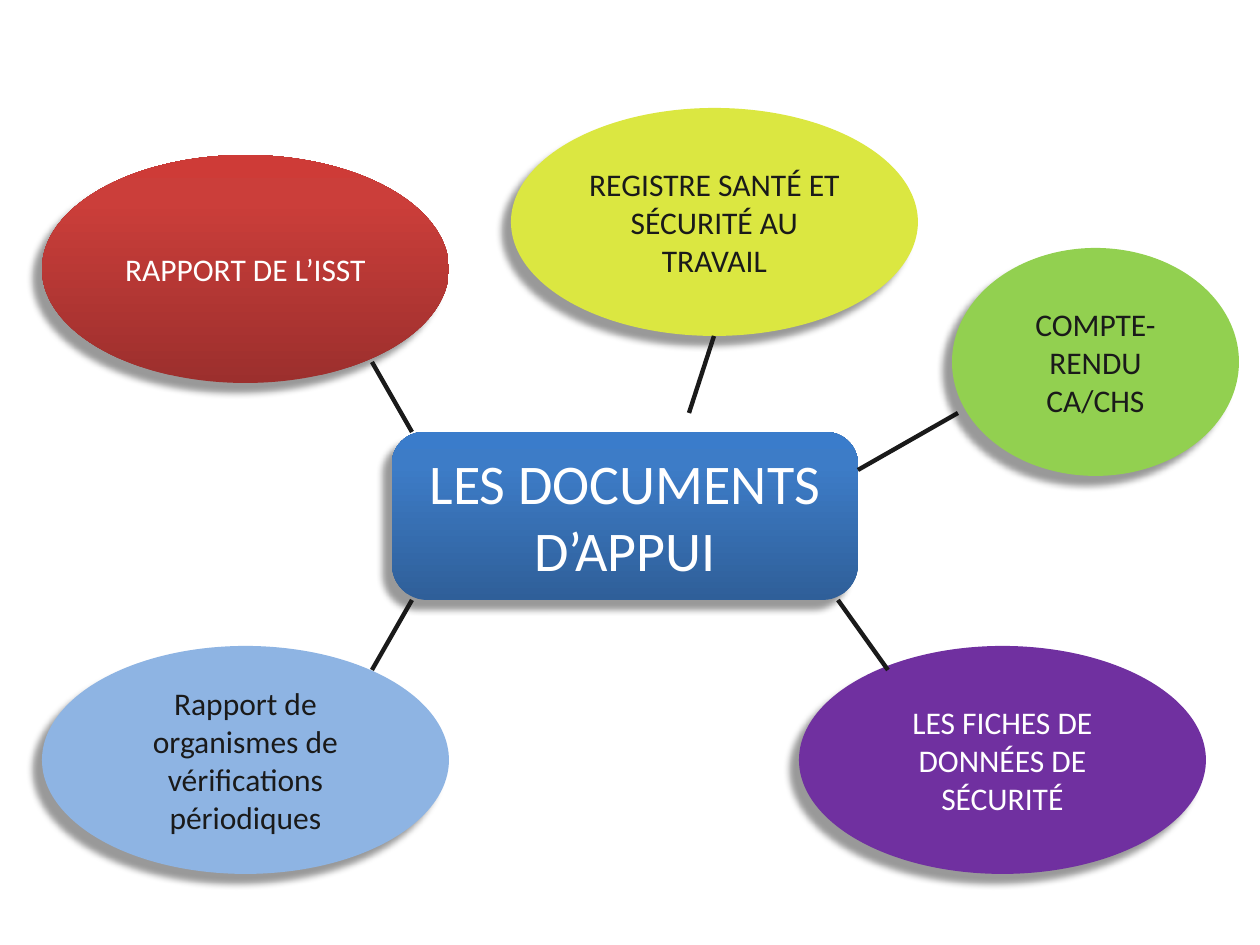
"""Build a mind map of the supporting documents around a central topic."""
from copy import deepcopy

from lxml.etree import SubElement
from pptx import Presentation
from pptx.dml.color import RGBColor
from pptx.enum.shapes import MSO_CONNECTOR, MSO_SHAPE
from pptx.enum.text import MSO_ANCHOR, PP_ALIGN
from pptx.oxml.ns import qn
from pptx.util import Emu, Pt

PX = 914400 // 126
WHITE, INK = "FFFFFF", "1A1A1A"
BUBBLE_W, BUBBLE_H = 407, 228
LEFT_X, LOWER_Y = 42, 646
GRADIENT_POSITIONS = (0, 0.8, 1)

TOPIC = {
    "text": "LES DOCUMENTS D’APPUI",
    "box": (392, 432, 466, 168),
    "fill": ("2F5F99", "3D7CC7", "3A7CCB"),
    "corners": (0.19, 0.21),
}
DOCUMENTS = [
    ("RAPPORT DE L’ISST", LEFT_X, 155, BUBBLE_W, ("9C2F2D", "CB3E3A", "CE3B37"), WHITE),
    ("Rapport de organismes de vérifications périodiques",
     LEFT_X, LOWER_Y, BUBBLE_W, ("8EB4E3",), INK),
    ("LES FICHES DE DONNÉES DE SÉCURITÉ", 799, LOWER_Y, BUBBLE_W, ("7030A0",), WHITE),
    ("REGISTRE SANTÉ ET SÉCURITÉ AU TRAVAIL", 511, 108, BUBBLE_W, ("DBE741",), INK),
    ("COMPTE-RENDU CA/CHS", 952, 248, 287, ("92D050",), INK),
]
LINKS = [
    (372, 362, 412, 432),
    (412, 600, 372, 670),
    (689, 413, 714, 336),
    (838, 600, 888, 670),
    (858, 470, 958, 413),
]


def px(*lengths):
    return [Emu(length * PX) for length in lengths]


def color(hex_string):
    return RGBColor.from_string(hex_string)


def paint(shape, colors):
    if len(colors) == 1:
        shape.fill.solid()
        shape.fill.fore_color.rgb = color(colors[0])
        return
    shape.fill.gradient()
    shape.fill.gradient_angle = 90
    stop_list = shape._element.spPr.find(".//" + qn("a:gsLst"))
    stop_list.append(deepcopy(stop_list[-1]))
    for stop, position, tone in zip(shape.fill.gradient_stops, GRADIENT_POSITIONS, colors):
        stop.position = position
        stop.color.rgb = color(tone)


def cast_shadow(shape):
    shape.shadow.inherit = False
    effects = shape._element.spPr.find(qn("a:effectLst"))
    shadow = SubElement(effects, qn("a:outerShdw"), blurRad=str(Pt(4)), dist=str(Pt(8)),
                        dir=str(135 * 60000), algn="tr", rotWithShape="0")
    black = SubElement(shadow, qn("a:srgbClr"), val="000000")
    SubElement(black, qn("a:alpha"), val="40000")


def write(shape, text, *, size, ink):
    frame = shape.text_frame
    frame.word_wrap = True
    frame.vertical_anchor = MSO_ANCHOR.MIDDLE
    paragraph = frame.paragraphs[0]
    paragraph.alignment = PP_ALIGN.CENTER
    run = paragraph.add_run()
    run.text = text
    run.font.name = "Calibri"
    run.font.size = Pt(size)
    run.font.color.rgb = color(ink)


def add_node(slide, preset, box, colors, text, **text_format):
    node = slide.shapes.add_shape(preset, *px(*box))
    paint(node, colors)
    node.line.fill.background()
    cast_shadow(node)
    write(node, text, **text_format)
    return node


def add_document(slide, text, x, y, width, colors, ink):
    add_node(slide, MSO_SHAPE.OVAL, (x, y, width, BUBBLE_H), colors, text, size=18, ink=ink)


def add_link(slide, ends):
    link = slide.shapes.add_connector(MSO_CONNECTOR.STRAIGHT, *px(*ends))
    link.line.color.rgb = color(INK)
    link.line.width = Pt(2.5)
    SubElement(link._element.spPr, qn("a:effectLst"))


def main():
    deck = Presentation()
    deck.slide_width, deck.slide_height = px(1260, 945)
    slide = deck.slides.add_slide(deck.slide_layouts.get_by_name("Blank"))

    topic = add_node(slide, MSO_SHAPE.ROUND_2_SAME_RECTANGLE, TOPIC["box"], TOPIC["fill"],
                     TOPIC["text"], size=32, ink=WHITE)
    for index, corner in enumerate(TOPIC["corners"]):
        topic.adjustments[index] = corner

    for document in DOCUMENTS[:-1]:
        add_document(slide, *document)
    for ends in LINKS:
        add_link(slide, ends)
    add_document(slide, *DOCUMENTS[-1])

    deck.save("out.pptx")


if __name__ == "__main__":
    main()
